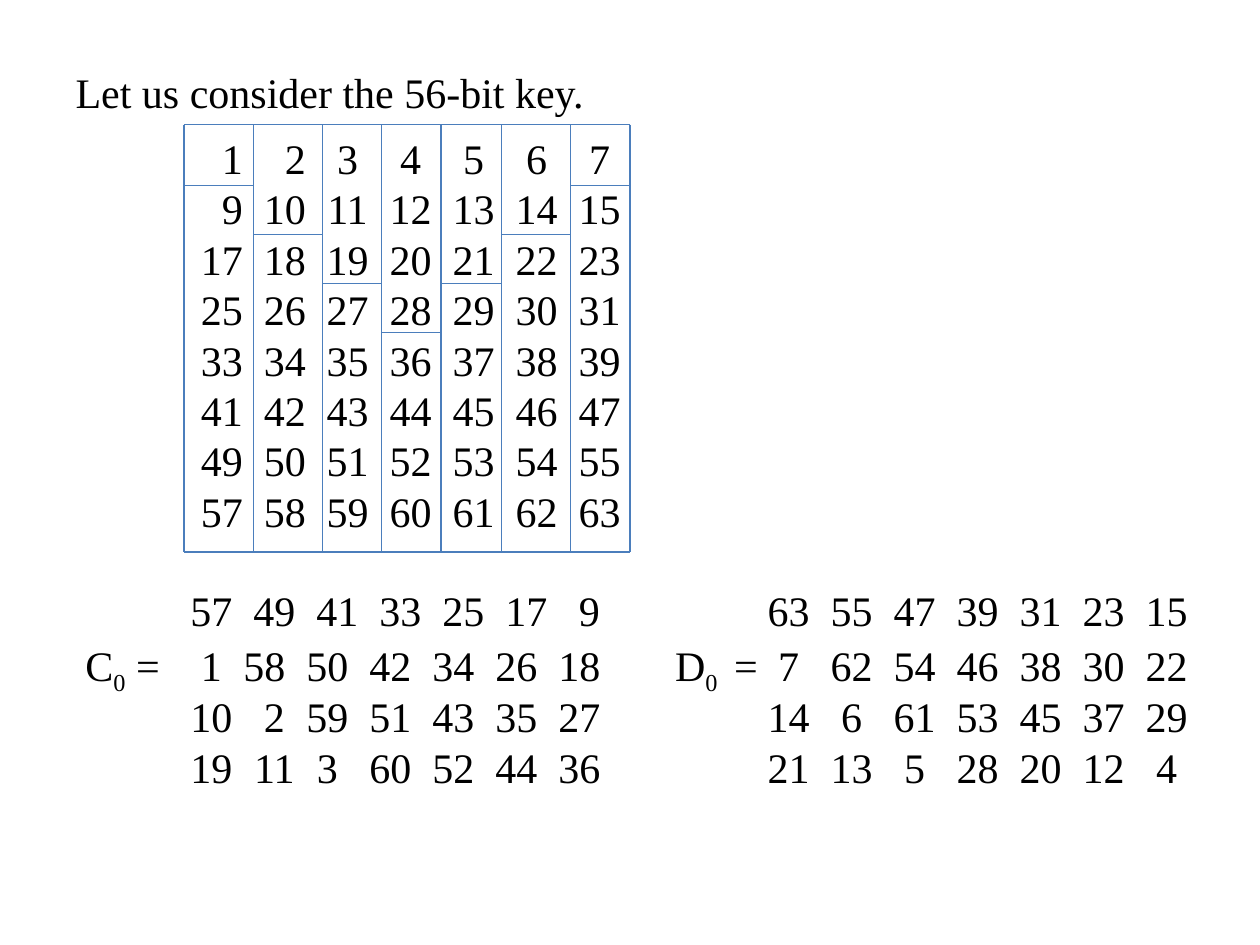
from dataclasses import dataclass
from itertools import accumulate

from lxml import etree
from pptx import Presentation
from pptx import util as u
from pptx.dml.color import RGBColor
from pptx.enum import shapes, text
from pptx.oxml import ns

BLACK = RGBColor(0x00, 0x00, 0x00)
GRID_BLUE = RGBColor(0x4B, 0x7E, 0xBC)
FONT = "Times New Roman"
PITCH = 0.5
DRIFT = 0.08
ROW_GAP = 5.76
BLOCK_GAP = 33.6
GRID_TOP, GRID_BOTTOM = 0.99, 4.38
FIRST_STEP, STEP = 1.47, 0.39
COLUMN_WIDTHS = [0.55, 0.55, 0.47, 0.47, 0.48, 0.55, 0.47]


@dataclass
class Tab:
    position: float
    align: str


@dataclass
class Span:
    words: str
    subscript: bool = False


@dataclass
class HalfRow:
    c_values: str
    d_values: str
    drift_from: int
    c_label: tuple[Span, ...] = ()
    d_label: tuple[Span, ...] = ()


HALF_ROWS = [
    HalfRow("57 49 41 33 25 17 9", "63 55 47 39 31 23 15", 7),
    HalfRow("1 58 50 42 34 26 18", "7 62 54 46 38 30 22", 1,
            (Span("C"), Span("0", True), Span(" =")),
            (Span("D"), Span("0 ", True), Span(" ="))),
    HalfRow("10 2 59 51 43 35 27", "14 6 61 53 45 37 29", 2),
    HalfRow("19 11 3 60 52 44 36", "21 13 5 28 20 12 4", 2),
]


def centred_tabs(start: float, count: int, drift_from: int = 7) -> list[Tab]:
    return [Tab(start + PITCH * i - (DRIFT if i >= drift_from else 0), "ctr")
            for i in range(count)]


def tabbed(values: str) -> Span:
    return Span("".join("\t" + value for value in values.split()))


def style(para) -> None:
    para.alignment = text.PP_ALIGN.LEFT
    para.font.name = FONT
    para.font.size = u.Pt(24)
    para.font.color.rgb = BLACK


def write_row(para, spans: list[Span], tabs: list[Tab], gap: float) -> None:
    para.line_spacing = 0.8
    para.space_before = u.Pt(gap)
    tab_list = etree.SubElement(para._p.get_or_add_pPr(), ns.qn("a:tabLst"))
    for tab in tabs:
        etree.SubElement(tab_list, ns.qn("a:tab"),
                         pos=str(u.Inches(tab.position)), algn=tab.align)
    style(para)
    for span in spans:
        run = para.add_run()
        run.text = span.words
        if span.subscript:
            run._r.get_or_add_rPr().set("baseline", "-25000")


def draw_line(page, x1: float, y1: float, x2: float, y2: float) -> None:
    line = page.shapes.add_connector(
        shapes.MSO_CONNECTOR.STRAIGHT,
        u.Inches(x1), u.Inches(y1), u.Inches(x2), u.Inches(y2))
    line.line.color.rgb = GRID_BLUE
    line.line.width = u.Pt(0.75)
    etree.SubElement(line._element.spPr, ns.qn("a:effectLst"))


def add_heading(page) -> None:
    title = page.shapes.title
    title.left, title.top = u.Inches(0.5), u.Inches(0.48)
    title.width, title.height = u.Inches(9.3), u.Inches(0.5)
    frame = title.text_frame
    frame.auto_size = text.MSO_AUTO_SIZE.NONE
    frame.vertical_anchor = text.MSO_ANCHOR.TOP
    frame.text = "Let us consider the 56-bit key."
    style(frame.paragraphs[0])


def add_key_bits(page) -> None:
    box = page.shapes.add_textbox(
        u.Inches(0.5), u.Inches(1.08), u.Inches(9.3), u.Inches(5.3))
    frame = box.text_frame
    frame.word_wrap = True
    key_tabs = [Tab(1.33, "r"), Tab(1.83, "r"), *centred_tabs(2.16, 5)]
    for row in range(8):
        para = frame.add_paragraph() if row else frame.paragraphs[0]
        bits = " ".join(str(8 * row + column) for column in range(1, 8))
        write_row(para, [tabbed(bits)], key_tabs, ROW_GAP if row else 0)
    for index, half in enumerate(HALF_ROWS):
        tabs = [Tab(0.08, "l"), *centred_tabs(1.08, 7, half.drift_from),
                Tab(4.76, "l"), *centred_tabs(5.66, 7)]
        spans = [Span("\t"), *half.c_label, tabbed(half.c_values),
                 Span("\t"), *half.d_label, tabbed(half.d_values)]
        write_row(frame.add_paragraph(), spans, tabs,
                  ROW_GAP if index else BLOCK_GAP)


def add_grid(page) -> None:
    edges = list(accumulate(COLUMN_WIDTHS, initial=1.46))
    for x in edges:
        draw_line(page, x, GRID_TOP, x, GRID_BOTTOM)
    for y in (GRID_TOP, GRID_BOTTOM):
        draw_line(page, edges[0], y, edges[-1], y)
    for column, (left, right) in enumerate(zip(edges, edges[1:])):
        y = FIRST_STEP + STEP * min(column, 6 - column)
        draw_line(page, left, y, right, y)


def main() -> None:
    deck = Presentation()
    deck.slide_width, deck.slide_height = u.Inches(10), u.Inches(7.5)
    page = deck.slides.add_slide(deck.slide_layouts.get_by_name("Title Only"))
    add_heading(page)
    add_key_bits(page)
    add_grid(page)
    deck.save("out.pptx")


if __name__ == "__main__":
    main()
